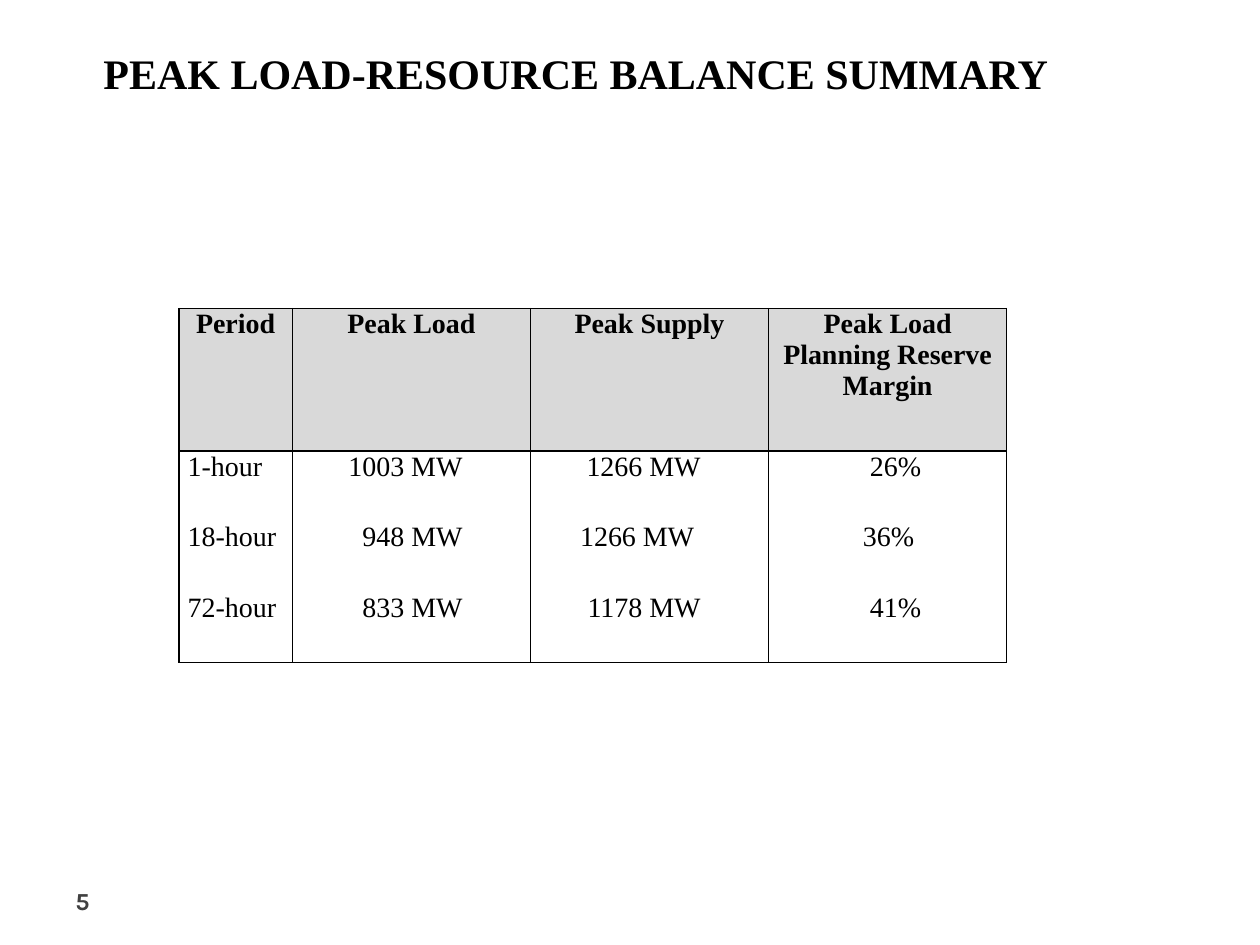
"""Build the peak load-resource balance summary slide."""
from lxml.etree import SubElement
from pptx import Presentation
from pptx.dml.color import RGBColor
from pptx.enum.text import MSO_ANCHOR, MSO_AUTO_SIZE, PP_ALIGN
from pptx.oxml.ns import qn
from pptx.util import Inches, Pt

TITLE = "PEAK LOAD-RESOURCE BALANCE SUMMARY"
PAGE = "5"
HEAD = ["Period", "Peak Load", "Peak Supply", "Peak Load Planning Reserve Margin"]
DATA = [
    ["1-hour", "1003 MW", "1266 MW", "26%"],
    ["18-hour", "948 MW", "1266 MW ", "36% "],
    ["72-hour", "833 MW", "1178 MW", "41%"],
]
HEX = {"ink": "000000", "head": "D9D9D9", "page": "404040"}
COLS = [0.9] + [1.89] * 3
ROWS = [0.62, 1.13] + [0.56] * 4
PADS = [0.07, 0.54, 0.54, 0.68]
SERIF = "Times New Roman"


def put(item, vals):
    for name, val in vals.items():
        setattr(item, name, val)


def place(shape, *box):
    put(shape, dict(zip(("left", "top", "width", "height"), map(Inches, box))))


def write(frame, text, size, color="ink", face=SERIF, bold=True, align=PP_ALIGN.LEFT):
    para = frame.paragraphs[0]
    para.alignment = align
    run = para.add_run()
    run.text = text
    put(run.font, {"name": face, "size": Pt(size), "bold": bold})
    run.font.color.rgb = RGBColor.from_string(HEX[color])


def edge(cell, sides):
    props = cell._tc.get_or_add_tcPr()
    for side in "LRTB":
        line = SubElement(props, qn(f"a:ln{side}"), w=str(Pt(1)))
        if side in sides:
            fill = SubElement(line, qn("a:solidFill"))
            SubElement(fill, qn("a:srgbClr"), val=HEX["ink"])
        else:
            SubElement(line, qn("a:noFill"))


def fill_table(table):
    put(table, {"first_row": False, "horz_banding": False})
    for col, width in zip(table.columns, COLS):
        col.width = Inches(width)
    for row, height in zip(table.rows, ROWS):
        row.height = Inches(height)
    table.cell(0, 0).merge(table.cell(0, len(COLS) - 1))
    sides = ["B", "LRTB", "LRT", "LR", "LRB", "T"]
    grid = [None, HEAD, *DATA, None]
    for r, texts in enumerate(grid):
        for c, pad in enumerate(PADS):
            cell = table.cell(r, c)
            edge(cell, sides[r])
            cell.fill.background()
            if not texts:
                continue
            head = r == 1
            align = PP_ALIGN.CENTER if head else PP_ALIGN.RIGHT if c else PP_ALIGN.LEFT
            put(cell, {
                "margin_left": Inches(0.07),
                "margin_right": Inches(0.07 if head else pad),
                "margin_top": 0,
                "margin_bottom": 0,
            })
            if head:
                cell.fill.solid()
                cell.fill.fore_color.rgb = RGBColor.from_string(HEX["head"])
            write(cell.text_frame, texts[c], 16, bold=head, align=align)


def main():
    deck = Presentation()
    put(deck, {"slide_width": Inches(10), "slide_height": Inches(7.5)})
    slide = deck.slides.add_slide(deck.slide_layouts[5])
    title = slide.shapes.title
    place(title, 0.68, 0.33, 7.78, 0.5)
    put(title.text_frame, {
        "word_wrap": False,
        "auto_size": MSO_AUTO_SIZE.SHAPE_TO_FIT_TEXT,
        "vertical_anchor": MSO_ANCHOR.TOP,
    })
    write(title.text_frame, TITLE, 24, align=PP_ALIGN.CENTER)

    box = [Inches(v) for v in (1.42, 1.83, sum(COLS), sum(ROWS))]
    fill_table(slide.shapes.add_table(len(ROWS), len(COLS), *box).table)

    page = slide.shapes.add_textbox(0, 0, 0, 0)
    place(page, 0.5, 6.95, 2.33, 0.4)
    put(page.text_frame, {"word_wrap": True, "vertical_anchor": MSO_ANCHOR.MIDDLE})
    write(page.text_frame, PAGE, 14, "page", "Karla")
    deck.save("out.pptx")


if __name__ == "__main__":
    main()
